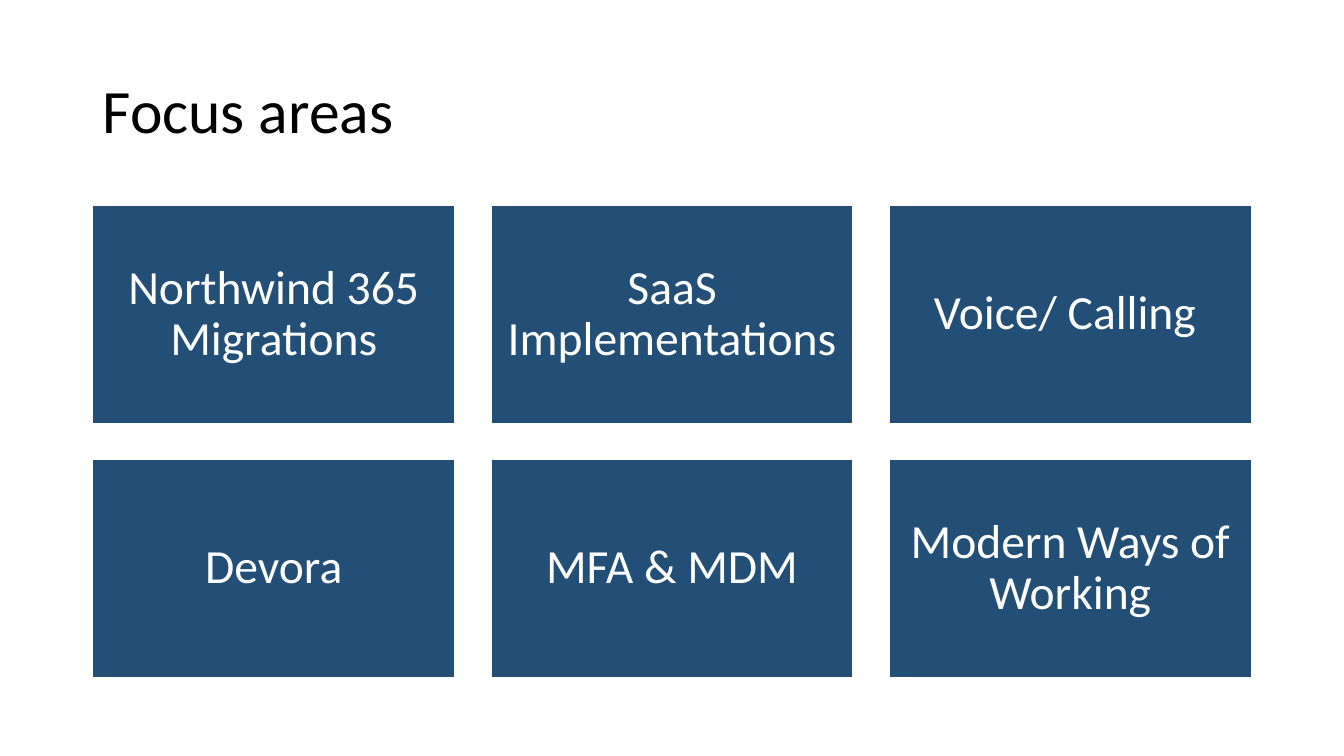
from pptx import Presentation
from pptx.dml.color import RGBColor
from pptx.enum.shapes import MSO_SHAPE
from pptx.enum.text import MSO_ANCHOR, PP_ALIGN
from pptx.util import Inches, Pt

RECTANGLE = MSO_SHAPE.RECTANGLE
MIDDLE = MSO_ANCHOR.MIDDLE
LEFT, CENTER = PP_ALIGN.LEFT, PP_ALIGN.CENTER

NAVY = RGBColor(0x23, 0x4F, 0x77)
WHITE = RGBColor(0xFF, 0xFF, 0xFF)
BLACK = RGBColor(0x00, 0x00, 0x00)
FONT = "Calibri"

FOCUS_AREAS = [
    "Northwind 365 Migrations",
    "SaaS Implementations",
    "Voice/ Calling ",
    "Devora",
    "MFA & MDM",
    "Modern Ways of Working",
]
COLUMNS = 3
TILE_WIDTH, TILE_HEIGHT = 3.59, 2.16
GAP = 0.36
TILE_INSET = Inches(0.14)


def write(frame, wording, size, color, alignment):
    frame.word_wrap = True
    frame.vertical_anchor = MIDDLE
    frame.text = wording
    paragraph = frame.paragraphs[0]
    paragraph.alignment = alignment
    paragraph.line_spacing = 0.9
    font = paragraph.runs[0].font
    font.name = FONT
    font.size = Pt(size)
    font.color.rgb = color


def add_title(slide, left, top, width, height):
    title = slide.shapes.add_textbox(
        Inches(left), Inches(top), Inches(width), Inches(height))
    write(title.text_frame, "Focus areas", 44, BLACK, LEFT)


def add_tile(slide, left, top, area):
    tile = slide.shapes.add_shape(
        RECTANGLE, Inches(left), Inches(top),
        Inches(TILE_WIDTH), Inches(TILE_HEIGHT))
    tile.shadow.inherit = False
    tile.fill.solid()
    tile.fill.fore_color.rgb = NAVY
    tile.line.color.rgb = WHITE
    tile.line.width = Pt(1)
    frame = tile.text_frame
    frame.margin_left = frame.margin_right = TILE_INSET
    frame.margin_top = frame.margin_bottom = TILE_INSET
    write(frame, area, 34, WHITE, CENTER)


def add_focus_grid(slide, left, top):
    for index, area in enumerate(FOCUS_AREAS):
        row, column = divmod(index, COLUMNS)
        add_tile(slide, left + column * (TILE_WIDTH + GAP),
                 top + row * (TILE_HEIGHT + GAP), area)


def main():
    deck = Presentation()
    deck.slide_width = Inches(13.33)
    deck.slide_height = Inches(7.5)
    slide = deck.slides.add_slide(deck.slide_layouts[6])
    add_title(slide, 0.92, 0.4, 11.5, 1.45)
    add_focus_grid(slide, 0.92, 2.04)
    deck.save("out.pptx")


if __name__ == "__main__":
    main()
